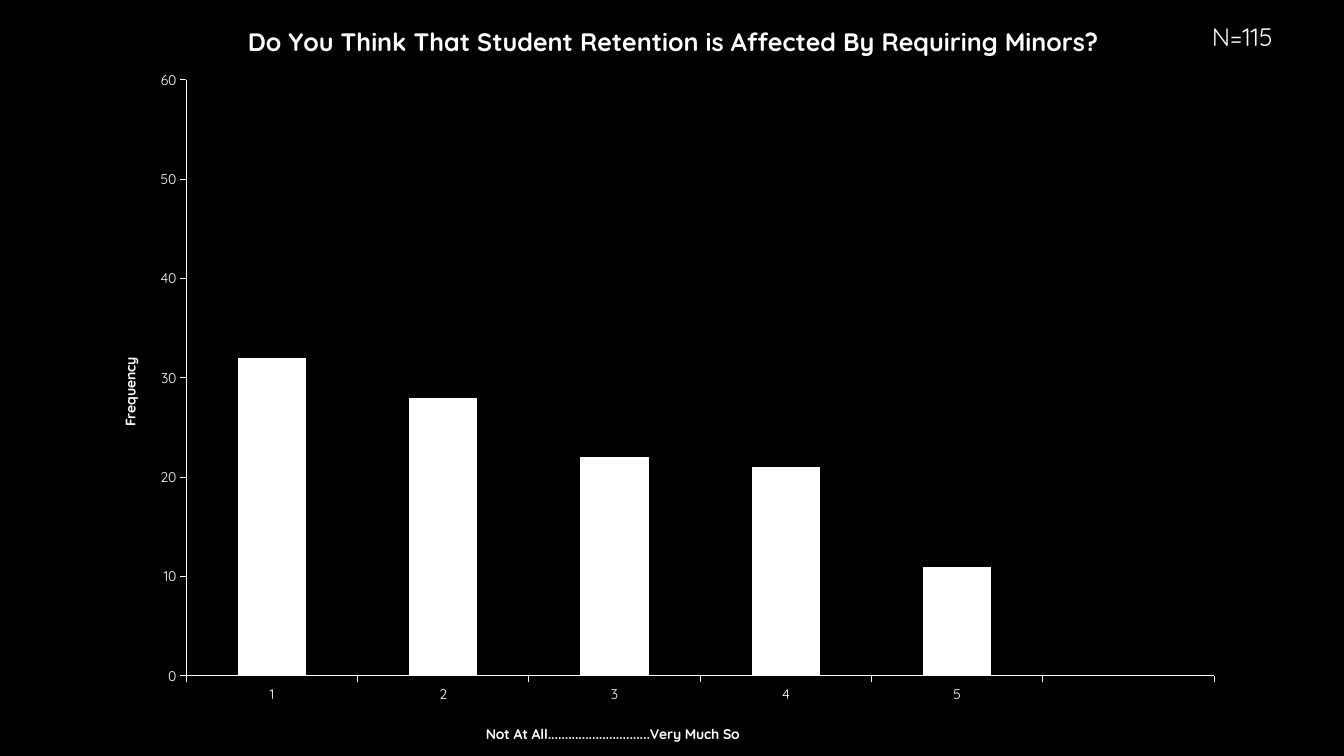
from lxml import etree
from pptx import Presentation
from pptx.chart.data import CategoryChartData
from pptx.dml.color import RGBColor
from pptx.enum.chart import XL_CHART_TYPE as ChartType, XL_TICK_MARK as TickMark
from pptx.oxml.ns import qn
from pptx.util import Inches, Pt

COLORS = {"background": "000000", "foreground": "FFFFFF"}
FONT = "Quicksand"
RATINGS = ["1", "2", "3", "4", "5", ""]
FREQUENCIES = [32, 28, 22, 21, 11, None]


def color(name):
    return RGBColor.from_string(COLORS[name])


def style_font(font, size, bold=False):
    font.name = FONT
    font.size = Pt(size)
    font.bold = bold
    font.color.rgb = color("foreground")


def set_layout(element, position, **settings):
    layout = element.find(qn("c:layout"))
    if layout is None:
        layout = etree.Element(qn("c:layout"))
        text = element.find(qn("c:tx"))
        element.insert(0 if text is None else 1, layout)
    manual = etree.SubElement(layout, qn("c:manualLayout"))
    values = {**settings, "xMode": "edge", "yMode": "edge", **position}
    for tag, value in values.items():
        etree.SubElement(manual, qn(f"c:{tag}")).set("val", str(value))


def write_title(owner, text, size, x, y):
    owner.has_title = True
    title = owner.chart_title if hasattr(owner, "chart_title") else owner.axis_title
    title.text_frame.text = text
    style_font(title.text_frame.paragraphs[0].font, size, bold=True)
    return title


def style_axis(axis, title, x, y):
    axis.has_major_gridlines = False
    axis.major_tick_mark = TickMark.OUTSIDE
    axis.minor_tick_mark = TickMark.NONE
    axis.format.line.color.rgb = color("foreground")
    axis.format.line.width = Pt(0.75)
    style_font(axis.tick_labels.font, 10)
    axis.has_title = True
    write_heading(axis.axis_title, title, 10, x, y)


def write_heading(heading, text, size, x, y):
    heading.text_frame.text = text
    style_font(heading.text_frame.paragraphs[0].font, size, bold=True)
    set_layout(heading._element, {"x": x, "y": y})


def add_frequency_chart(slide, left, top, width, height):
    data = CategoryChartData()
    data.categories = RATINGS
    data.add_series("Series 1", FREQUENCIES)
    chart = slide.shapes.add_chart(
        ChartType.COLUMN_CLUSTERED,
        Inches(left), Inches(top), Inches(width), Inches(height), data,
    ).chart
    style_font(chart.font, 10)
    chart.has_legend = False
    chart.has_title = True
    write_heading(
        chart.chart_title,
        "Do You Think That Student Retention is Affected By Requiring Minors?",
        18, 0.13, 0.03,
    )
    style_axis(
        chart.category_axis,
        "Not At All..............................Very Much So", 0.34, 0.95,
    )
    style_axis(chart.value_axis, "Frequency", 0.02, 0.47)
    chart.value_axis.minimum_scale = 0
    chart.value_axis.maximum_scale = 60
    chart.value_axis.major_unit = 10

    plot = chart.plots[0]
    plot.gap_width = 150
    plot.vary_by_categories = False
    fill = plot.series[0].format.fill
    fill.solid()
    fill.fore_color.rgb = color("foreground")
    plot_area = chart._chartSpace.chart.plotArea
    set_layout(
        plot_area, {"x": 0.08, "y": 0.11, "w": 0.9, "h": 0.78}, layoutTarget="inner"
    )


def add_sample_size(slide, left, top, width, height):
    box = slide.shapes.add_textbox(
        Inches(left), Inches(top), Inches(width), Inches(height)
    )
    box.text_frame.word_wrap = True
    paragraph = box.text_frame.paragraphs[0]
    paragraph.text = "N=115"
    style_font(paragraph.font, 18)


def build_slide(presentation):
    slide = presentation.slides.add_slide(presentation.slide_layouts[6])
    slide.background.fill.solid()
    slide.background.fill.fore_color.rgb = color("background")
    add_frequency_chart(slide, 0.94, -0.04, 11.33, 7.58)
    add_sample_size(slide, 11.92, 0.16, 1.25, 0.71)


def main():
    presentation = Presentation()
    presentation.slide_width = Inches(13.33)
    presentation.slide_height = Inches(7.5)
    build_slide(presentation)
    presentation.save("out.pptx")


if __name__ == "__main__":
    main()
